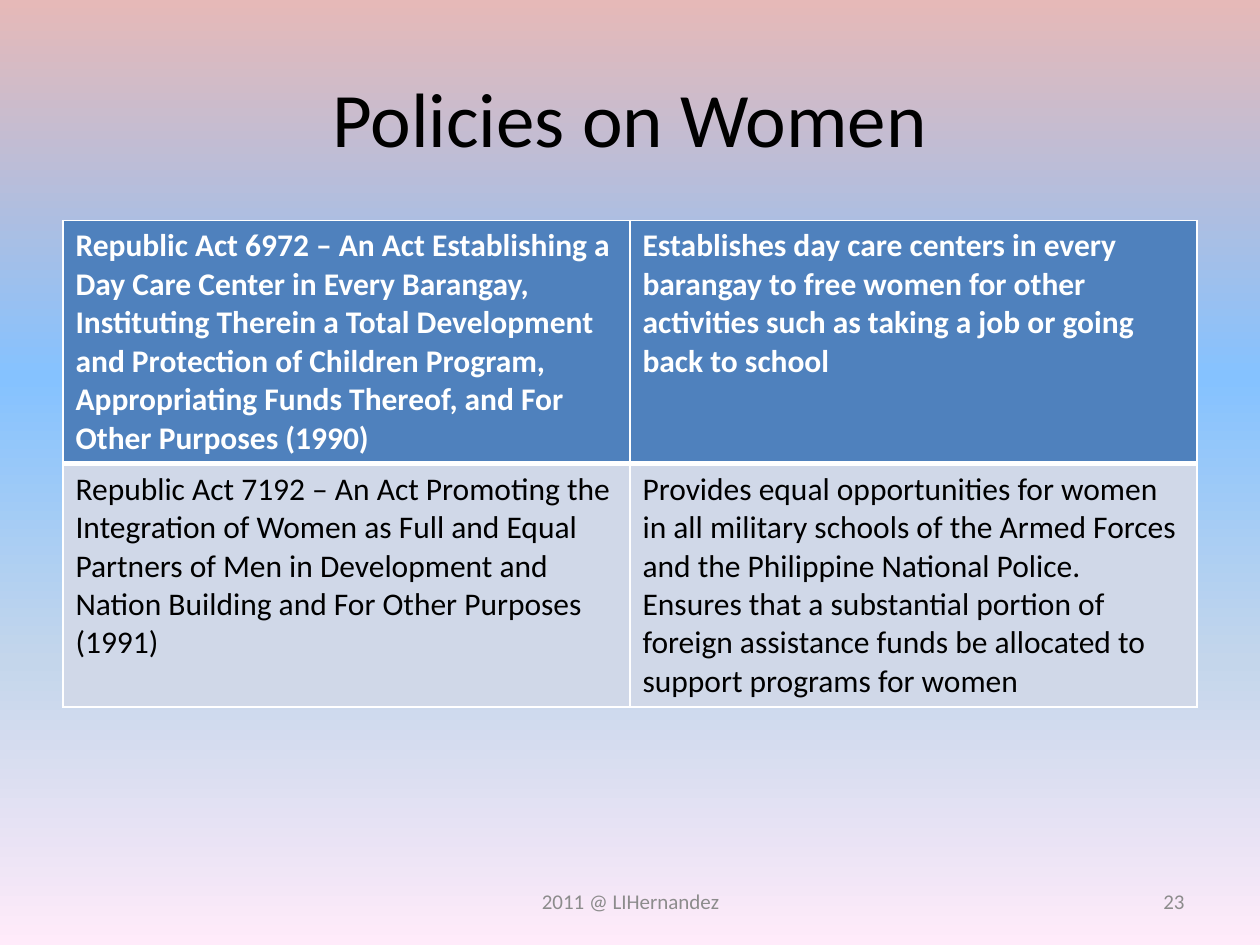
from lxml import etree
from pptx import Presentation
from pptx.dml.color import RGBColor
from pptx.enum.text import MSO_ANCHOR, PP_ALIGN
from pptx.oxml.ns import qn
from pptx.util import Inches, Pt

CENTER, RIGHT, LEFT = PP_ALIGN.CENTER, PP_ALIGN.RIGHT, PP_ALIGN.LEFT
MIDDLE = MSO_ANCHOR.MIDDLE
TITLE_ONLY = 5

COLORS = {
    "text": "000000",
    "header_text": "FFFFFF",
    "footer": "8C8C8C",
    "header_fill": "4F81BD",
    "body_fill": "D0D8E8",
    "border": "FFFFFF",
}
BACKGROUND_STOPS = [(0, "E6B9B8"), (40, "85C2FF"), (70, "C4D6EB"), (100, "FFEBFA")]

POLICIES = [
    ("Republic Act 6972 – An Act Establishing a Day Care Center in Every Barangay, "
     "Instituting Therein a Total Development and Protection of Children Program, "
     "Appropriating Funds Thereof, and For Other Purposes (1990)",
     "Establishes day care centers in every barangay to free women for other "
     "activities such as taking a job or going back to school"),
    ("Republic Act 7192 – An Act Promoting the Integration of Women as Full and Equal "
     "Partners of Men in Development and Nation Building and For Other Purposes (1991)",
     "Provides equal opportunities for women in all military schools of the Armed "
     "Forces and the Philippine National Police. Ensures that a substantial portion of "
     "foreign assistance funds be allocated to support programs for women"),
]


def write_text(frame, text, color, align=LEFT, **font_values):
    frame.text = text
    frame.word_wrap = True
    paragraph = frame.paragraphs[0]
    paragraph.alignment = align
    font = paragraph.runs[0].font
    for name, value in {"name": "Calibri", **font_values}.items():
        setattr(font, name, value)
    font.color.rgb = RGBColor.from_string(COLORS[color])


def place(shape, box):
    for name, value in zip(("left", "top", "width", "height"), box):
        setattr(shape, name, Inches(value))


def paint_background(slide):
    fill = slide.background.fill
    fill.gradient()
    fill.gradient_angle = 270
    stops = slide.element.find(".//" + qn("a:gsLst"))
    for stop in list(stops):
        stops.remove(stop)
    for percent, color in BACKGROUND_STOPS:
        stop = etree.SubElement(stops, qn("a:gs"), pos=str(percent * 1000))
        etree.SubElement(stop, qn("a:srgbClr"), val=color)


def add_title(slide, box, text):
    title = slide.shapes.title
    place(title, box)
    title.text_frame.vertical_anchor = MIDDLE
    write_text(title.text_frame, text, "text", CENTER, size=Pt(44))


def set_borders(cell, widths):
    """Draw the cell's edges; widths maps L, R, T and B to points."""
    properties = cell._tc.get_or_add_tcPr()
    for position, side in enumerate("LRTB"):
        line = etree.Element(qn(f"a:ln{side}"), w=str(Pt(widths[side])))
        fill = etree.SubElement(line, qn("a:solidFill"))
        etree.SubElement(fill, qn("a:srgbClr"), val=COLORS["border"])
        properties.insert(position, line)


def add_policy_table(slide, box, rows):
    left, top, width, height = map(Inches, box)
    table = slide.shapes.add_table(len(rows), len(rows[0]), left, top, width, height).table
    for row_index, row in enumerate(rows):
        is_header = row_index == 0
        part = "header" if is_header else "body"
        for column_index, text in enumerate(row):
            cell = table.cell(row_index, column_index)
            write_text(cell.text_frame, text, "header_text" if is_header else "text",
                       size=Pt(18), bold=is_header)
            cell.fill.solid()
            cell.fill.fore_color.rgb = RGBColor.from_string(COLORS[f"{part}_fill"])
            set_borders(cell, {"L": 1, "R": 1,
                               "T": 3 if row_index == 1 else 1,
                               "B": 3 if is_header else 1})


def add_footer(slide, box, text, align):
    shape = slide.shapes.add_textbox(*map(Inches, box))
    shape.text_frame.vertical_anchor = MIDDLE
    write_text(shape.text_frame, text, "footer", align, size=Pt(12))


def main():
    presentation = Presentation()
    presentation.slide_width, presentation.slide_height = Inches(10), Inches(7.5)
    slide = presentation.slides.add_slide(presentation.slide_layouts[TITLE_ONLY])
    paint_background(slide)
    add_title(slide, (0.5, 0.3, 9, 1.25), "Policies on Women")
    add_policy_table(slide, (0.5, 1.75, 9, 3.86), POLICIES)
    add_footer(slide, (3.42, 6.95, 3.17, 0.4), "2011 @ LIHernandez", CENTER)
    add_footer(slide, (7.17, 6.95, 2.33, 0.4), "23", RIGHT)
    presentation.save("out.pptx")


if __name__ == "__main__":
    main()
